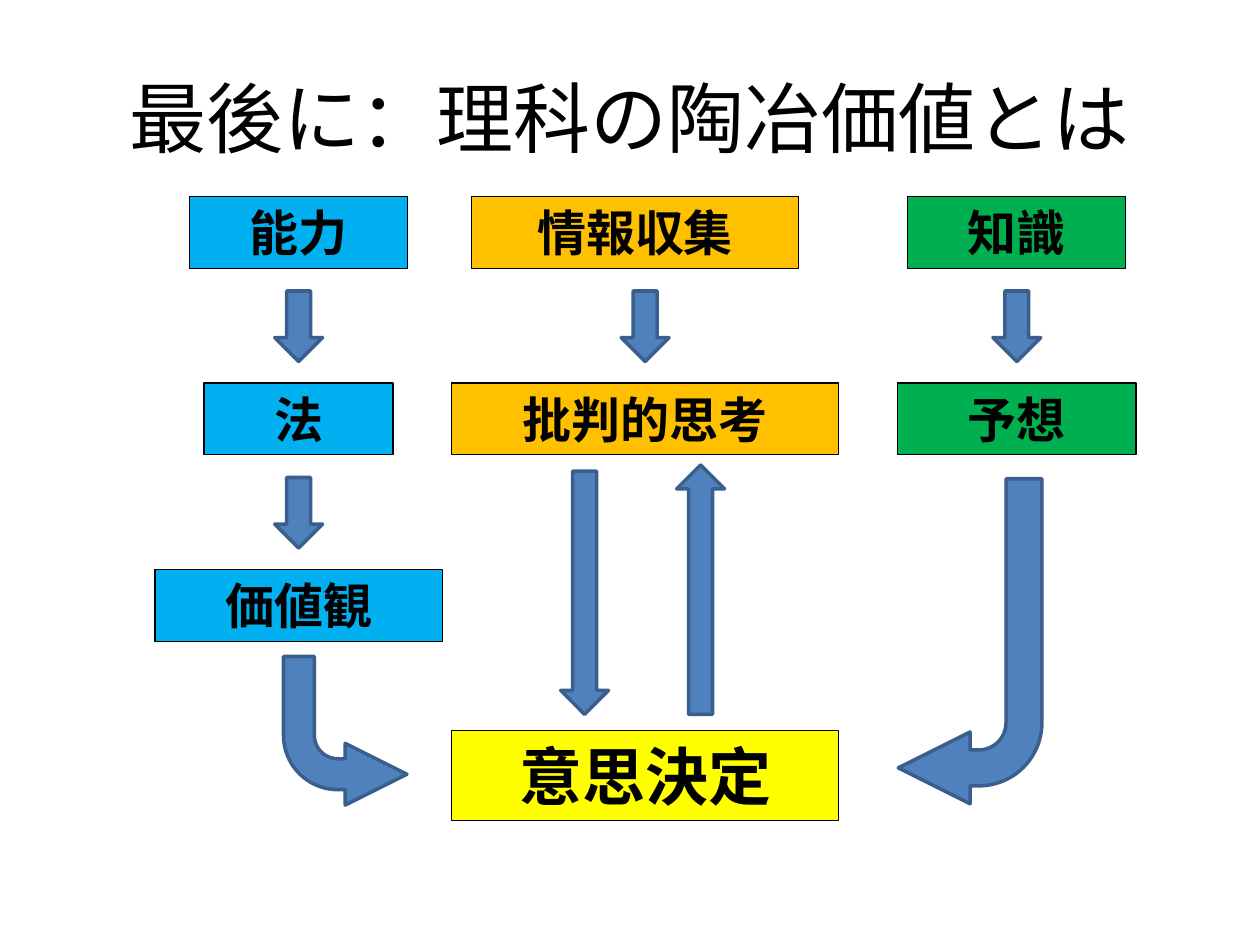
from dataclasses import dataclass

from pptx import Presentation
from pptx.dml.color import RGBColor
from pptx.enum.shapes import MSO_SHAPE
from pptx.enum.text import MSO_ANCHOR, MSO_AUTO_SIZE, PP_ALIGN
from pptx.util import Inches, Pt

BLACK = RGBColor(0x00, 0x00, 0x00)
YELLOW = RGBColor(0xFF, 0xFF, 0x00)
SKY = RGBColor(0x00, 0xB0, 0xF0)
ORANGE = RGBColor(0xFF, 0xC0, 0x00)
GREEN = RGBColor(0x00, 0xB0, 0x50)
ARROW_FILL = RGBColor(0x4F, 0x81, 0xBD)
ARROW_EDGE = RGBColor(0x3A, 0x5F, 0x8C)
FONT = "Cabin"

# Grid in inches: column centres, and the top of each row of boxes
LEFT, MIDDLE, RIGHT = 2.37, 5.12, 8.07
FIRST_ROW, ROW_STEP = 1.56, 1.48
BOX_HEIGHT = 0.57
ARROW_DROP, ARROW_WIDTH, ARROW_HEIGHT = 0.75, 0.38, 0.56


@dataclass(frozen=True)
class Box:
    text: str
    center: float
    row: int
    width: float
    color: RGBColor


@dataclass(frozen=True)
class Arrow:
    kind: MSO_SHAPE
    left: float
    top: float
    width: float
    height: float
    flips: tuple[str, ...] = ()


BOXES = [
    Box("能力", LEFT, 0, 1.73, SKY),
    Box("法", LEFT, 1, 1.5, SKY),
    Box("価値観", LEFT, 2, 2.28, SKY),
    Box("情報収集", MIDDLE - 0.08, 0, 2.6, ORANGE),
    Box("批判的思考", MIDDLE, 1, 3.07, ORANGE),
    Box("知識", RIGHT, 0, 1.73, GREEN),
    Box("予想", RIGHT, 1, 1.89, GREEN),
]


def row_top(row: int) -> float:
    return FIRST_ROW + row * ROW_STEP


def step_arrow(center: float, row: int) -> Arrow:
    """Short arrow from a box to the one in the next row."""
    return Arrow(MSO_SHAPE.DOWN_ARROW, center - ARROW_WIDTH / 2,
                 row_top(row) + ARROW_DROP, ARROW_WIDTH, ARROW_HEIGHT)


ARROWS = [
    step_arrow(LEFT, 0),
    step_arrow(LEFT, 1),
    step_arrow(MIDDLE, 0),
    step_arrow(RIGHT, 0),
    Arrow(MSO_SHAPE.DOWN_ARROW, 4.45, 3.74, ARROW_WIDTH, 1.93),
    Arrow(MSO_SHAPE.UP_ARROW, 5.37, 3.69, ARROW_WIDTH, 1.98),
    Arrow(MSO_SHAPE.BENT_ARROW, 2.25, 5.21, 0.98, 1.18, ("flipV",)),
    Arrow(MSO_SHAPE.BENT_ARROW, 7.13, 3.8, 1.14, 2.58, ("flipH", "flipV")),
]


def add_outlined(page, kind: MSO_SHAPE, left: float, top: float, width: float,
                 height: float, fill: RGBColor, edge: RGBColor, weight: float):
    shape = page.shapes.add_shape(
        kind, Inches(left), Inches(top), Inches(width), Inches(height))
    shape.shadow.inherit = False
    shape.fill.solid()
    shape.fill.fore_color.rgb = fill
    shape.line.color.rgb = edge
    shape.line.width = Pt(weight)
    return shape


def write_text(frame, text: str, size: float, bold: bool, anchor: MSO_ANCHOR) -> None:
    frame.word_wrap = True
    frame.vertical_anchor = anchor
    paragraph = frame.paragraphs[0]
    paragraph.text = text
    paragraph.alignment = PP_ALIGN.CENTER
    paragraph.font.name = FONT
    paragraph.font.size = Pt(size)
    paragraph.font.bold = bold
    paragraph.font.color.rgb = BLACK


def add_label(page, text: str, center: float, top: float, width: float,
              height: float, color: RGBColor, size: float) -> None:
    shape = add_outlined(page, MSO_SHAPE.RECTANGLE, center - width / 2, top,
                         width, height, color, BLACK, 0.75)
    write_text(shape.text_frame, text, size, True, MSO_ANCHOR.TOP)
    shape.text_frame.auto_size = MSO_AUTO_SIZE.SHAPE_TO_FIT_TEXT


def add_arrow(page, arrow: Arrow) -> None:
    shape = add_outlined(page, arrow.kind, arrow.left, arrow.top, arrow.width,
                         arrow.height, ARROW_FILL, ARROW_EDGE, 2)
    if arrow.kind == MSO_SHAPE.BENT_ARROW:
        for index, value in enumerate((0.25, 0.25, 0.5, 0.44)):
            shape.adjustments[index] = value
    for flip in arrow.flips:
        shape.element.spPr.xfrm.set(flip, "1")


def main() -> None:
    deck = Presentation()
    deck.slide_width, deck.slide_height = Inches(10), Inches(7.5)
    page = deck.slides.add_slide(deck.slide_layouts[6])
    title = page.shapes.add_textbox(Inches(0.5), Inches(0.3), Inches(9), Inches(1.25))
    write_text(title.text_frame, "最後に：理科の陶冶価値とは", 44, False, MSO_ANCHOR.MIDDLE)
    for box in BOXES:
        add_label(page, box.text, box.center, row_top(box.row), box.width,
                  BOX_HEIGHT, box.color, 28)
    add_label(page, "意思決定", MIDDLE, 5.8, 3.07, 0.71, YELLOW, 36)
    for arrow in ARROWS:
        add_arrow(page, arrow)
    deck.save("out.pptx")


if __name__ == "__main__":
    main()
